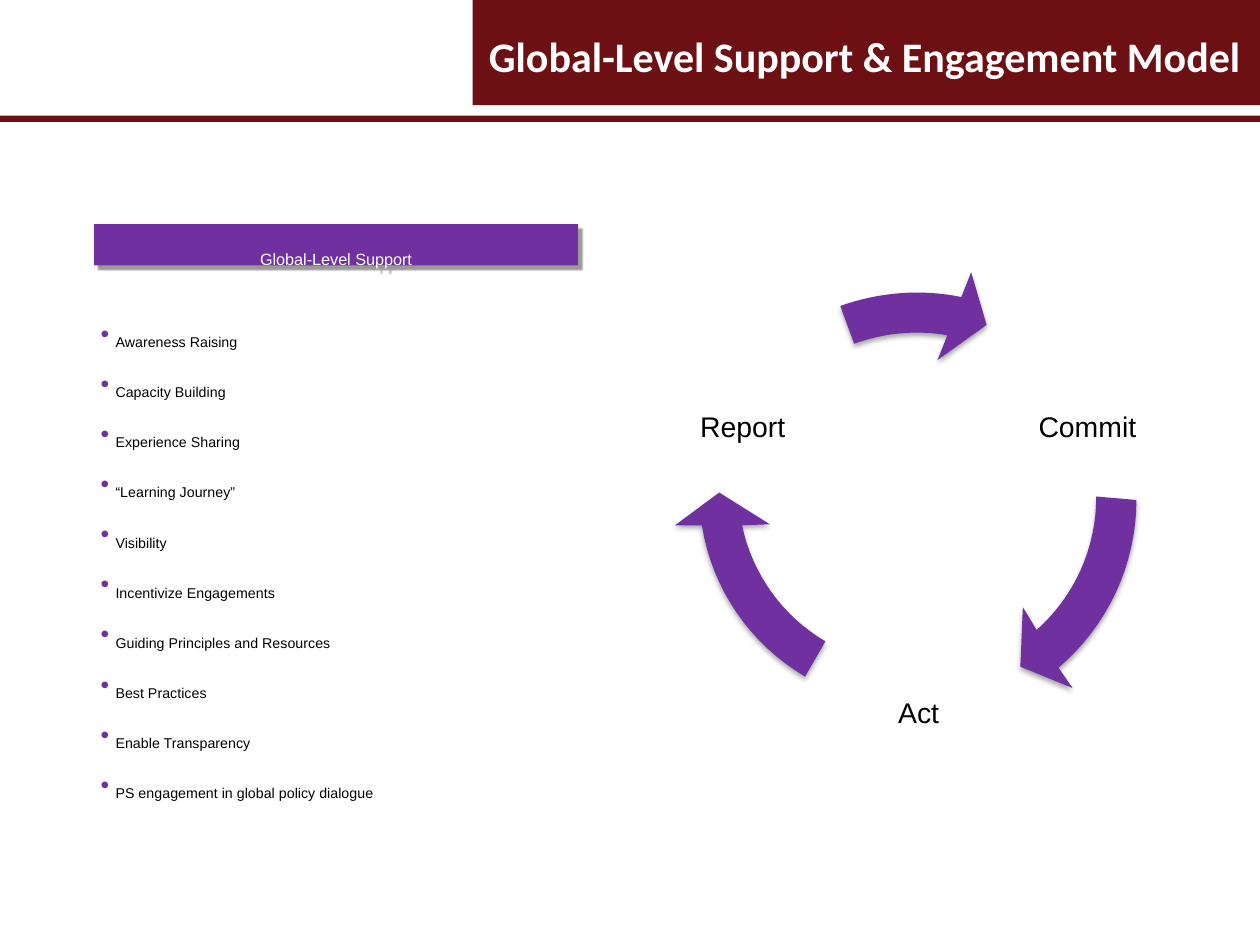
from lxml.etree import SubElement
from pptx import Presentation
from pptx.dml.color import RGBColor
from pptx.enum.shapes import MSO_SHAPE as Preset
from pptx.enum.text import MSO_ANCHOR as Anchor, PP_ALIGN as Align
from pptx.oxml.ns import qn
from pptx.util import Cm, Pt

COLORS = {
    "maroon": "6D1014",
    "purple": "7030A0",
    "white": "FFFFFF",
    "black": "000000",
}
ARROW_SHADOW = {"alpha": 35, "blur": 3, "distance": 1.8, "angle": 90}
BAR_SHADOW = {"alpha": 40, "blur": 1, "distance": 3, "angle": 45}
CURVE_STEPS = 16

SUPPORT_ITEMS = [
    "Awareness Raising",
    "Capacity Building",
    "Experience Sharing",
    "“Learning Journey”",
    "Visibility",
    "Incentivize Engagements",
    "Guiding Principles and Resources",
    "Best Practices",
    "Enable Transparency",
    "PS engagement in global policy dialogue",
]
CYCLE_LABELS = [
    ("Commit", 19.83, 7.47),
    ("Act", 16.43, 13.23),
    ("Report", 12.88, 7.47),
]
CYCLE_ARROWS = [
    {
        "outer": [(22.91, 10.08), (22.91, 11.38), (22.33, 12.62), (21.34, 13.46)],
        "head": [(21.62, 13.87), (20.57, 13.44), (20.62, 12.24)],
        "inner": [(20.9, 12.7), (21.67, 12.01), (22.1, 11.05), (22.1, 10.01)],
    },
    {
        "outer": [(16.23, 13.64), (15.11, 12.98), (14.35, 11.86), (14.15, 10.59)],
        "head": [(13.61, 10.59), (14.5, 9.93), (15.52, 10.57)],
        "inner": [(14.96, 10.59), (15.16, 11.56), (15.77, 12.42), (16.64, 12.93)],
    },
    {
        "outer": [(16.94, 6.17), (17.73, 5.89), (18.57, 5.82), (19.38, 5.99)],
        "head": [(19.58, 5.49), (19.89, 6.55), (18.9, 7.26)],
        "inner": [(19.1, 6.76), (18.47, 6.65), (17.83, 6.71), (17.22, 6.93)],
    },
]


def curve_points(controls):
    points = []
    for step in range(CURVE_STEPS + 1):
        t = step / CURVE_STEPS
        weights = [(1 - t) ** 3, 3 * t * (1 - t) ** 2, 3 * t**2 * (1 - t), t**3]
        points.append(
            tuple(sum(w * c for w, c in zip(weights, axis)) for axis in zip(*controls))
        )
    return points


class SlideBuilder:
    def __init__(self, slide, font="Arial"):
        self.slide = slide
        self.font = font

    def color(self, name):
        return RGBColor.from_string(COLORS[name])

    def paint(self, shape, fill, shadow=None):
        shape.fill.solid()
        shape.fill.fore_color.rgb = self.color(fill)
        shape.line.fill.background()
        shape.shadow.inherit = False
        if shadow:
            effects = shape._element.spPr.find(qn("a:effectLst"))
            outer = SubElement(
                effects,
                qn("a:outerShdw"),
                blurRad=str(Pt(shadow["blur"])),
                dist=str(Pt(shadow["distance"])),
                dir=str(shadow["angle"] * 60000),
                rotWithShape="0",
            )
            tint = SubElement(outer, qn("a:srgbClr"), val=COLORS["black"])
            SubElement(tint, qn("a:alpha"), val=str(shadow["alpha"] * 1000))

    def bar(self, left, top, width, height, fill, shadow=None):
        shape = self.slide.shapes.add_shape(
            Preset.RECTANGLE, Cm(left), Cm(top), Cm(width), Cm(height)
        )
        self.paint(shape, fill, shadow)
        return shape

    def arrow(self, outer, head, inner):
        outline = curve_points(outer) + head + curve_points(inner)
        start, *rest = [(Cm(x), Cm(y)) for x, y in outline]
        builder = self.slide.shapes.build_freeform(*start)
        builder.add_line_segments(rest, close=True)
        self.paint(builder.convert_to_shape(), "purple", ARROW_SHADOW)

    def text_box(self, left, top, width, height):
        return self.slide.shapes.add_textbox(Cm(left), Cm(top), Cm(width), Cm(height))

    def set_text(self, shape, text, size, color, align=Align.CENTER, anchor=Anchor.TOP,
                 inset=0.13, spacing=None, font=None, bold=False, lowered=True):
        frame = shape.text_frame
        frame.word_wrap = True
        frame.vertical_anchor = anchor
        frame.margin_left = frame.margin_right = Cm(inset)
        frame.margin_top = frame.margin_bottom = Cm(inset)
        frame.text = text
        for paragraph in frame.paragraphs:
            paragraph.alignment = align
            if spacing:
                paragraph.line_spacing = spacing
            for run in paragraph.runs:
                run.font.name = font or self.font
                run.font.size = Pt(size)
                run.font.bold = bold
                run.font.color.rgb = self.color(color)
                if lowered:
                    run.font._element.set("baseline", "-25000")

    def bullets(self, shape, items, size):
        self.set_text(shape, "\n".join(items), size, "black", Align.LEFT, spacing=1.5)
        for paragraph in shape.text_frame.paragraphs:
            properties = paragraph._p.get_or_add_pPr()
            properties.set("marL", str(Cm(0.3)))
            properties.set("indent", str(Cm(-0.3)))
            bullet_color = SubElement(properties, qn("a:buClr"))
            SubElement(bullet_color, qn("a:srgbClr"), val=COLORS["purple"])
            SubElement(properties, qn("a:buFont"), typeface=self.font)
            SubElement(properties, qn("a:buChar"), char="•")


def main():
    presentation = Presentation()
    presentation.slide_width = Cm(25.4)
    presentation.slide_height = Cm(19.05)
    slide = presentation.slides.add_slide(presentation.slide_layouts[6])
    builder = SlideBuilder(slide)

    builder.bar(9.53, 0, 15.87, 2.12, "maroon")
    builder.bar(0, 2.33, 25.4, 0.13, "maroon")
    title = builder.text_box(2.18, 0.53, 22.83, 1.2)
    builder.set_text(title, "Global-Level Support & Engagement Model", 24, "white",
                     Align.RIGHT, Anchor.MIDDLE, inset=0, font="Calibri", bold=True,
                     lowered=False)

    for text, left, top in CYCLE_LABELS:
        label = builder.text_box(left, top, 4.18, 1.47)
        builder.set_text(label, text, 28, "black", anchor=Anchor.MIDDLE, inset=0.1,
                         spacing=0.9)
    for arrow in CYCLE_ARROWS:
        builder.arrow(**arrow)

    heading = builder.bar(1.9, 4.52, 9.75, 0.83, "purple", BAR_SHADOW)
    builder.set_text(heading, "Global-Level Support", 16, "white")
    support_list = builder.text_box(1.9, 5.92, 9.75, 11.71)
    builder.bullets(support_list, SUPPORT_ITEMS, 14)

    presentation.save("out.pptx")


if __name__ == "__main__":
    main()
